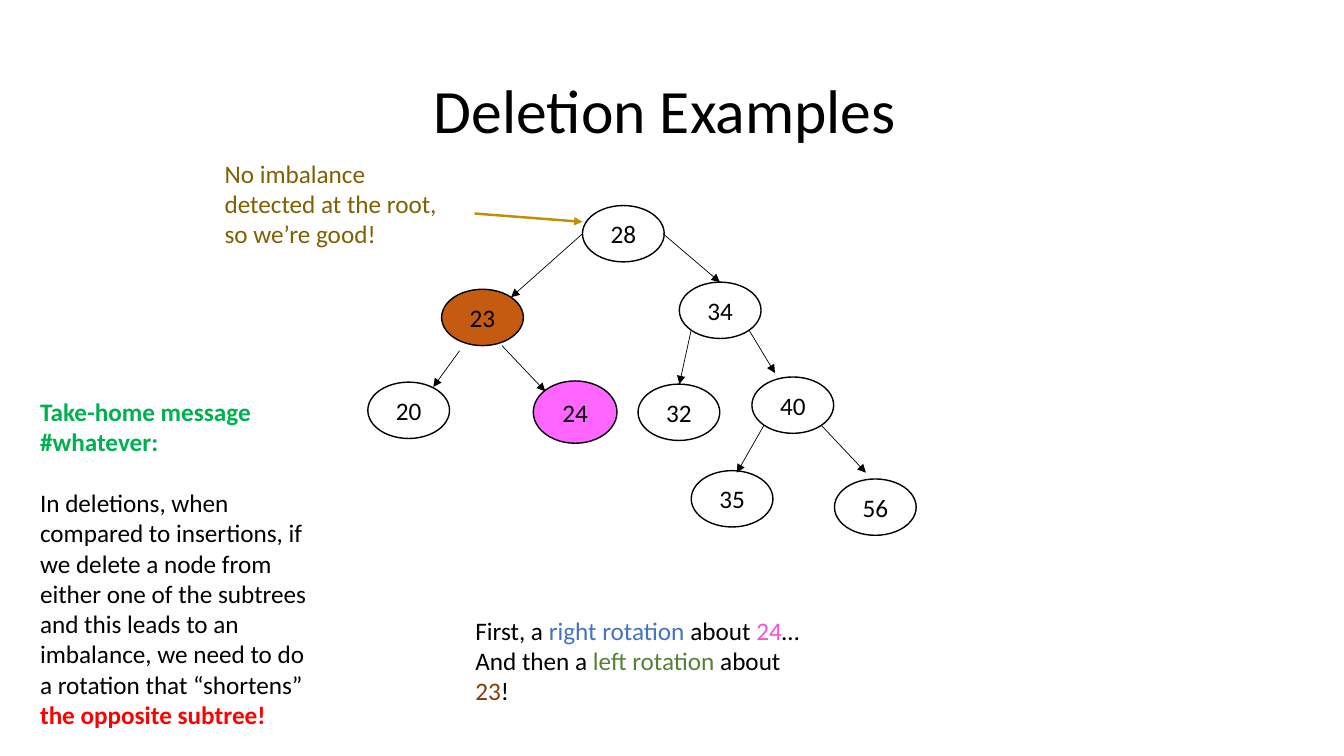
from lxml.etree import SubElement
from pptx import Presentation
from pptx.dml.color import RGBColor
from pptx.enum.shapes import MSO_CONNECTOR as Connector, MSO_SHAPE as Shape
from pptx.enum.text import MSO_ANCHOR as Anchor, MSO_AUTO_SIZE as AutoSize, PP_ALIGN as Align
from pptx.oxml.ns import qn
from pptx.util import Cm, Pt

FONT = "Calibri"
BLACK = "000000"
NODE_SIZE = (2.06, 1.42)

# value, left, top, then fill and size where they differ
NODES = [
    ("28", 14.68, 5.18),
    ("23", 11.13, 7.29, "C55A11"),
    ("34", 17.12, 7.11),
    ("20", 9.27, 9.63),
    ("24", 13.44, 9.6, "FF66FF", (2.11, 1.57)),
    ("32", 16.08, 9.68),
    ("40", 18.95, 9.5),
    ("35", 17.42, 11.86),
    ("56", 21.03, 12.07),
]

# start and end of each branch
BRANCHES = [
    ((14.68, 5.89), (12.88, 7.49)),
    ((16.71, 5.89), (18.14, 7.11)),
    ((11.58, 8.84), (10.92, 9.75)),
    ((12.65, 8.71), (13.74, 9.86)),
    ((17.42, 8.31), (17.12, 9.68)),
    ((18.87, 8.31), (19.53, 9.4)),
    ((19.25, 10.72), (18.57, 11.91)),
    ((20.7, 10.72), (21.82, 11.91)),
]

ROOT_NOTE = [[("No imbalance detected at the root, so we’re good!", "806000")]]
ROTATIONS = [
    [("First, a ", BLACK), ("right rotation ", "4472C4"), ("about ", BLACK),
     ("24", "FD4FD8"), ("…", BLACK)],
    [("And then a ", BLACK), ("left rotation ", "548235"), ("about ", BLACK),
     ("23", "843C0B"), ("!", BLACK)],
]
TAKE_HOME = [
    [("Take-home message #whatever:", "00B050", True)],
    [("In deletions, when compared to insertions, if we delete a node from "
      "either one of the subtrees and this leads to an imbalance, we need to do "
      "a rotation that “shortens” ", BLACK),
     ("the opposite subtree!", "FF0000", True)],
]


def rgb(color):
    return RGBColor.from_string(color)


def set_font(font, size, color=None):
    font.name = FONT
    font.size = Pt(size)
    if color:
        font.color.rgb = rgb(color)


def set_title(page, text):
    title = page.shapes.title
    title.left, title.top, title.width, title.height = Cm(2.33), Cm(1.01), Cm(29.21), Cm(3.68)
    title.text_frame.vertical_anchor = Anchor.MIDDLE
    para = title.text_frame.paragraphs[0]
    para.text = text
    para.alignment = Align.CENTER
    para.line_spacing = 0.9
    set_font(para.font, 44, BLACK)


def add_node(page, value, left, top, fill=None, size=NODE_SIZE):
    node = page.shapes.add_shape(Shape.OVAL, Cm(left), Cm(top), *map(Cm, size))
    node.shadow.inherit = False
    if fill:
        node.fill.solid()
        node.fill.fore_color.rgb = rgb(fill)
    else:
        node.fill.background()
    node.line.color.rgb = rgb(BLACK)
    node.line.width = Pt(1)
    node.text_frame.vertical_anchor = Anchor.MIDDLE
    para = node.text_frame.paragraphs[0]
    para.text = value
    para.alignment = Align.CENTER
    set_font(para.font, 18, BLACK)


def add_arrow(page, start, end, color=BLACK, width=0.5):
    arrow = page.shapes.add_connector(Connector.STRAIGHT, *map(Cm, start + end))
    arrow.line.color.rgb = rgb(color)
    arrow.line.width = Pt(width)
    SubElement(arrow.line._get_or_add_ln(), qn("a:tailEnd"), type="triangle")
    SubElement(arrow._element.spPr, qn("a:effectLst"))


def add_text(page, left, top, width, height, paragraphs, gap=0):
    """Add paragraphs of (text, colour, optional bold) spans, gap points apart."""
    box = page.shapes.add_textbox(Cm(left), Cm(top), Cm(width), Cm(height))
    frame = box.text_frame
    frame.word_wrap = True
    frame.auto_size = AutoSize.SHAPE_TO_FIT_TEXT
    for index, spans in enumerate(paragraphs):
        para = frame.add_paragraph() if index else frame.paragraphs[0]
        para.space_before = Pt(gap if index else 0)
        set_font(para.font, 18)
        for text, color, *bold in spans:
            span = para.add_run()
            span.text = text
            span.font.color.rgb = rgb(color)
            span.font.bold = bool(bold)


def main():
    deck = Presentation()
    deck.slide_width, deck.slide_height = Cm(33.87), Cm(19.05)
    page = deck.slides.add_slide(deck.slide_layouts.get_by_name("Title Only"))
    set_title(page, "Deletion Examples ")
    for node in NODES:
        add_node(page, *node)
    for start, end in BRANCHES:
        add_arrow(page, start, end)
    add_text(page, 11.73, 15.37, 9.02, 2.57, ROTATIONS)
    add_arrow(page, (11.96, 5.38), (14.68, 5.59), "BF9000", 1.75)
    add_text(page, 5.41, 3.86, 6.45, 2.57, ROOT_NOTE)
    add_text(page, 0.76, 9.86, 7.26, 8.71, TAKE_HOME, gap=22)
    deck.save("out.pptx")


if __name__ == "__main__":
    main()
